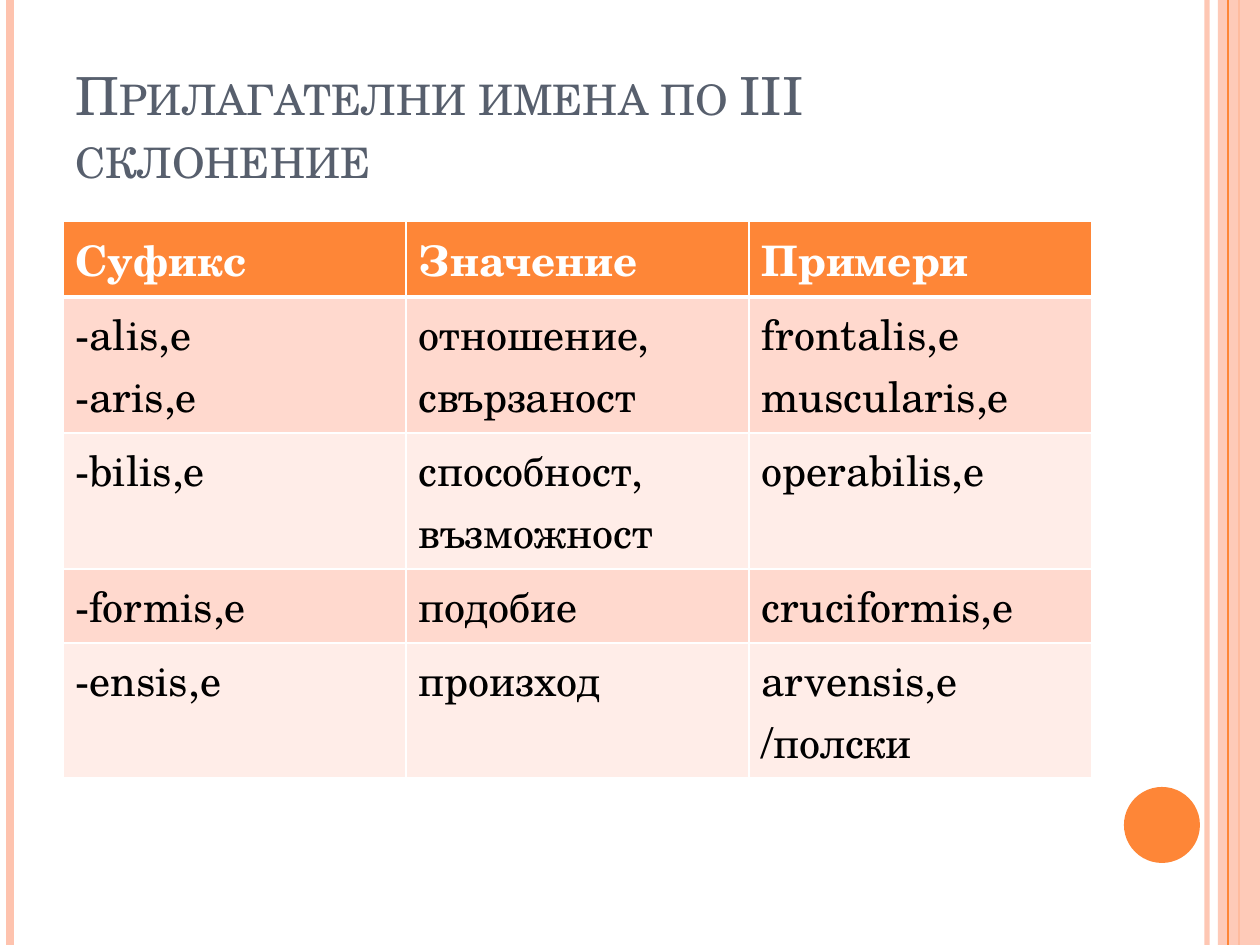
from lxml import etree
from pptx import Presentation
from pptx.dml.color import RGBColor
from pptx.enum.shapes import MSO_CONNECTOR, MSO_SHAPE
from pptx.enum.text import MSO_ANCHOR
from pptx.oxml.ns import qn
from pptx.util import Emu, Pt

STRAIGHT = MSO_CONNECTOR.STRAIGHT
RECTANGLE = MSO_SHAPE.RECTANGLE
OVAL = MSO_SHAPE.OVAL
BOTTOM = MSO_ANCHOR.BOTTOM

EMU_PER_PX = 914400 / 126
WIDTH, HEIGHT = 1260, 945
FONT = "TeX Gyre Schola"

ORANGE = RGBColor(0xFE, 0x86, 0x37)
PEACH = RGBColor(0xFE, 0xC3, 0xAE)
SLATE = RGBColor(0x57, 0x5F, 0x6D)
WHITE = RGBColor(0xFF, 0xFF, 0xFF)
BLACK = RGBColor(0x00, 0x00, 0x00)
BAND_FILLS = (RGBColor(0xFF, 0xD9, 0xCE), RGBColor(0xFF, 0xED, 0xE8))

TITLE = "Прилагателни имена по III склонение"
ROWS = [
    (["Суфикс"], ["Значение"], ["Примери"]),
    (["-alis,e", "-aris,e"], ["отношение, свързаност"], ["frontalis,e", "muscularis,e"]),
    (["-bilis,e"], ["способност, възможност"], ["operabilis,e"]),
    (["-formis,e"], ["подобие"], ["cruciformis,e"]),
    (["-ensis,e"], ["произход"], ["arvensis,e /полски"]),
]
ROW_HEIGHTS = (76, 136, 136, 74, 135)


def px(value):
    return Emu(round(value * EMU_PER_PX))


def box(*lengths):
    return [px(length) for length in lengths]


def set_opacity(element, percent):
    color = element.find(".//" + qn("a:srgbClr"))
    etree.SubElement(color, qn("a:alpha"), val=str(percent * 1000))


def add_vertical_line(slide, x, color, weight, opacity=100):
    line = slide.shapes.add_connector(STRAIGHT, *box(x, 0, x, HEIGHT))
    line.line.color.rgb = color
    line.line.width = Pt(weight)
    properties = line._element.spPr
    if opacity < 100:
        set_opacity(properties, opacity)
    etree.SubElement(properties, qn("a:effectLst"))


def add_filled_shape(slide, kind, bounds, color, opacity=100):
    shape = slide.shapes.add_shape(kind, *box(*bounds))
    shape.shadow.inherit = False
    shape.fill.solid()
    shape.fill.fore_color.rgb = color
    shape.line.fill.background()
    if opacity < 100:
        set_opacity(shape._element.spPr, opacity)


def add_run(paragraph, text, size, color, bold=False):
    run = paragraph.add_run()
    run.text = text
    run.font.name = FONT
    run.font.size = Pt(size)
    run.font.bold = bold
    run.font.color.rgb = color
    return run


def add_title(slide):
    frame = slide.shapes.add_textbox(*box(63, 38, 1029, 157)).text_frame
    frame.word_wrap = True
    frame.vertical_anchor = BOTTOM
    run = add_run(frame.paragraphs[0], TITLE, 30, SLATE)
    run.font._element.set("cap", "small")


def add_border(cell, side, weight):
    line = etree.SubElement(cell._tc.get_or_add_tcPr(), qn("a:ln" + side), w=str(Pt(weight)))
    fill = etree.SubElement(line, qn("a:solidFill"))
    etree.SubElement(fill, qn("a:srgbClr"), val=str(WHITE))


def fill_cell(cell, lines, row_index):
    header = row_index == 0
    add_border(cell, "L", 1)
    add_border(cell, "R", 1)
    add_border(cell, "T", 3 if row_index == 1 else 1)
    add_border(cell, "B", 3 if header else 1)
    cell.fill.solid()
    cell.fill.fore_color.rgb = ORANGE if header else BAND_FILLS[(row_index - 1) % 2]
    frame = cell.text_frame
    for index, text in enumerate(lines):
        paragraph = frame.add_paragraph() if index else frame.paragraphs[0]
        add_run(paragraph, text, 24, WHITE if header else BLACK, header)


def add_suffix_table(slide):
    bounds = box(63, 221, 1029, sum(ROW_HEIGHTS))
    table = slide.shapes.add_table(len(ROWS), len(ROWS[0]), *bounds).table
    for row_index, (row, height) in enumerate(zip(ROWS, ROW_HEIGHTS)):
        table.rows[row_index].height = px(height)
        for column_index, lines in enumerate(row):
            fill_cell(table.cell(row_index, column_index), lines, row_index)


def main():
    presentation = Presentation()
    presentation.slide_width, presentation.slide_height = box(WIDTH, HEIGHT)
    slide = presentation.slides.add_slide(presentation.slide_layouts[6])
    add_vertical_line(slide, 1207, PEACH, 3, 93)
    add_vertical_line(slide, 10, PEACH, 4.5)
    add_vertical_line(slide, 1239, ORANGE, 1.5)
    add_filled_shape(slide, RECTANGLE, (1218, 0, 42, HEIGHT), PEACH, 87)
    add_vertical_line(slide, 1228, ORANGE, 0.75)
    add_filled_shape(slide, OVAL, (1124, 787, 76, 76), ORANGE)
    add_title(slide)
    add_suffix_table(slide)
    presentation.save("out.pptx")


if __name__ == "__main__":
    main()
